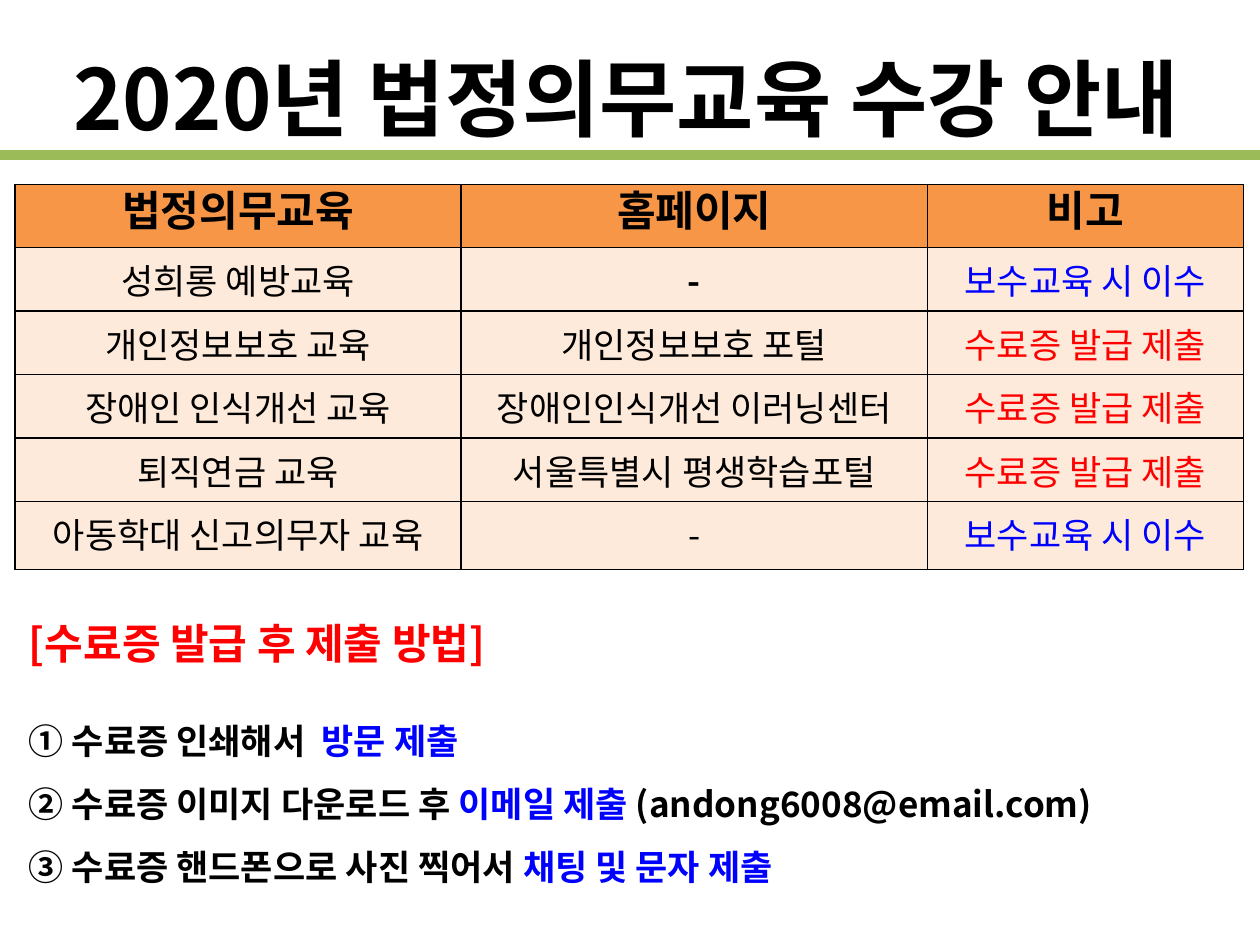
from lxml import etree
from pptx import Presentation
from pptx import oxml
from pptx import util as u
from pptx.dml.color import RGBColor
from pptx.enum import shapes, text
from pptx.oxml import ns

Pt = u.Pt
BLACK = RGBColor(0, 0, 0)
RED = RGBColor(255, 0, 0)
BLUE = RGBColor(0, 0, 255)
GREEN = RGBColor(0x9B, 0xBB, 0x59)
ORANGE = RGBColor(0xF7, 0x96, 0x46)
CREAM = RGBColor(0xFD, 0xEA, 0xDA)
CENTER = text.PP_ALIGN.CENTER
EDGE = (
    '<a:{} xmlns:a="http://schemas.openxmlformats.org/drawingml/2006/main" w="12700">'
    '<a:solidFill><a:srgbClr val="000000"/></a:solidFill></a:{}>'
)


class Page:
    face = "Noto Sans CJK KR"

    def __init__(self, deck):
        self.slide = deck.slides.add_slide(deck.slide_layouts[5])

    def words(self, par, runs, **form):
        for key, val in form.items():
            setattr(par, key, val)
        for label, size, color, bold in runs:
            run = par.add_run()
            run.text = label
            look = {"name": self.face, "size": Pt(size), "bold": bold}
            for key, val in look.items():
                setattr(run.font, key, val)
            run.font.color.rgb = color
            latin = run.font._element.find(ns.qn("a:latin"))
            east = etree.Element(ns.qn("a:ea"), typeface=self.face)
            latin.addnext(east)

    def title(self, box, label):
        shape = self.slide.shapes.title
        for key, val in zip(("left", "top", "width", "height"), box):
            setattr(shape, key, Pt(val))
        frame = shape.text_frame
        form = {
            "word_wrap": True,
            "auto_size": text.MSO_AUTO_SIZE.NONE,
            "vertical_anchor": text.MSO_ANCHOR.MIDDLE,
        }
        for key, val in form.items():
            setattr(frame, key, val)
        self.words(frame.paragraphs[0], [(label, 48, BLACK, True)],
                   alignment=CENTER, line_spacing=1.5)

    def rule(self, left, right, top):
        line = self.slide.shapes.add_connector(
            shapes.MSO_CONNECTOR.STRAIGHT, Pt(left), Pt(top), Pt(right), Pt(top))
        line.line.color.rgb = GREEN
        line.line.width = Pt(6)
        etree.SubElement(line._element.spPr, ns.qn("a:effectLst"))

    def cell(self, cell, label, size, color, bold, fill, **form):
        props = cell._tc.get_or_add_tcPr()
        for side in ("lnL", "lnR", "lnT", "lnB"):
            props.append(oxml.parse_xml(EDGE.format(side, side)))
        cell.fill.solid()
        cell.fill.fore_color.rgb = fill
        self.words(cell.text_frame.paragraphs[0], [(label, size, color, bold)],
                   alignment=CENTER, **form)

    def table(self, left, top, cols, rows, head, body):
        grid = self.slide.shapes.add_table(
            len(rows), len(cols), Pt(left), Pt(top), Pt(sum(cols)), Pt(sum(rows))).table
        for col, wide in zip(grid.columns, cols):
            col.width = Pt(wide)
        for row, high in zip(grid.rows, rows):
            row.height = Pt(high)
        for c, label in enumerate(head):
            self.cell(grid.cell(0, c), label, 24, BLACK, True, ORANGE,
                      line_spacing=Pt(27))
        for r, (name, site, note, color) in enumerate(body, 1):
            self.cell(grid.cell(r, 0), name, 20, BLACK, False, CREAM)
            self.cell(grid.cell(r, 1), site, 20, BLACK, r == 1, CREAM)
            self.cell(grid.cell(r, 2), note, 20, color, False, CREAM)

    def steps(self, box, head, items):
        frame = self.slide.shapes.add_textbox(*map(Pt, box)).text_frame
        frame.word_wrap = True
        frame.auto_size = text.MSO_AUTO_SIZE.SHAPE_TO_FIT_TEXT
        self.words(frame.paragraphs[0], [(head, 24, RED, True)])
        for n, item in enumerate(items):
            runs = [(label, 20, color, True) for label, color in item]
            self.words(frame.add_paragraph(), runs, line_spacing=1.5,
                       space_before=Pt(0 if n else 17.4))


def main():
    deck = Presentation()
    deck.slide_width, deck.slide_height = Pt(720), Pt(540)
    page = Page(deck)
    page.title((5, 9.4, 705.6, 62.6), "2020년 법정의무교육 수강 안내")
    page.rule(0, 720, 88.6)
    visit = ("보수교육 시 이수", BLUE)
    submit = ("수료증 발급 제출", RED)
    page.table(
        8.6, 105.5, (255, 266.4, 180.7), (36, 36, 34.6, 34.6, 34.6, 38.9),
        ("법정의무교육", "홈페이지", "비고"),
        [
            ("성희롱 예방교육", "-", *visit),
            ("개인정보보호 교육", "개인정보보호 포털", *submit),
            ("장애인 인식개선 교육", "장애인인식개선 이러닝센터", *submit),
            ("퇴직연금 교육", "서울특별시 평생학습포털", *submit),
            ("아동학대 신고의무자 교육", "-", *visit),
        ])
    page.steps(
        (9.4, 349.2, 689.8, 162.7), "[수료증 발급 후 제출 방법]",
        [
            [("① 수료증 인쇄해서  ", BLACK), ("방문 제출", BLUE)],
            [("② 수료증 이미지 다운로드 후 ", BLACK), ("이메일 제출 ", BLUE),
             ("(andong6008@email.com)", BLACK)],
            [("③ 수료증 핸드폰으로 사진 찍어서 ", BLACK), ("채팅 및 문자 제출", BLUE)],
        ])
    deck.save("out.pptx")


if __name__ == "__main__":
    main()
